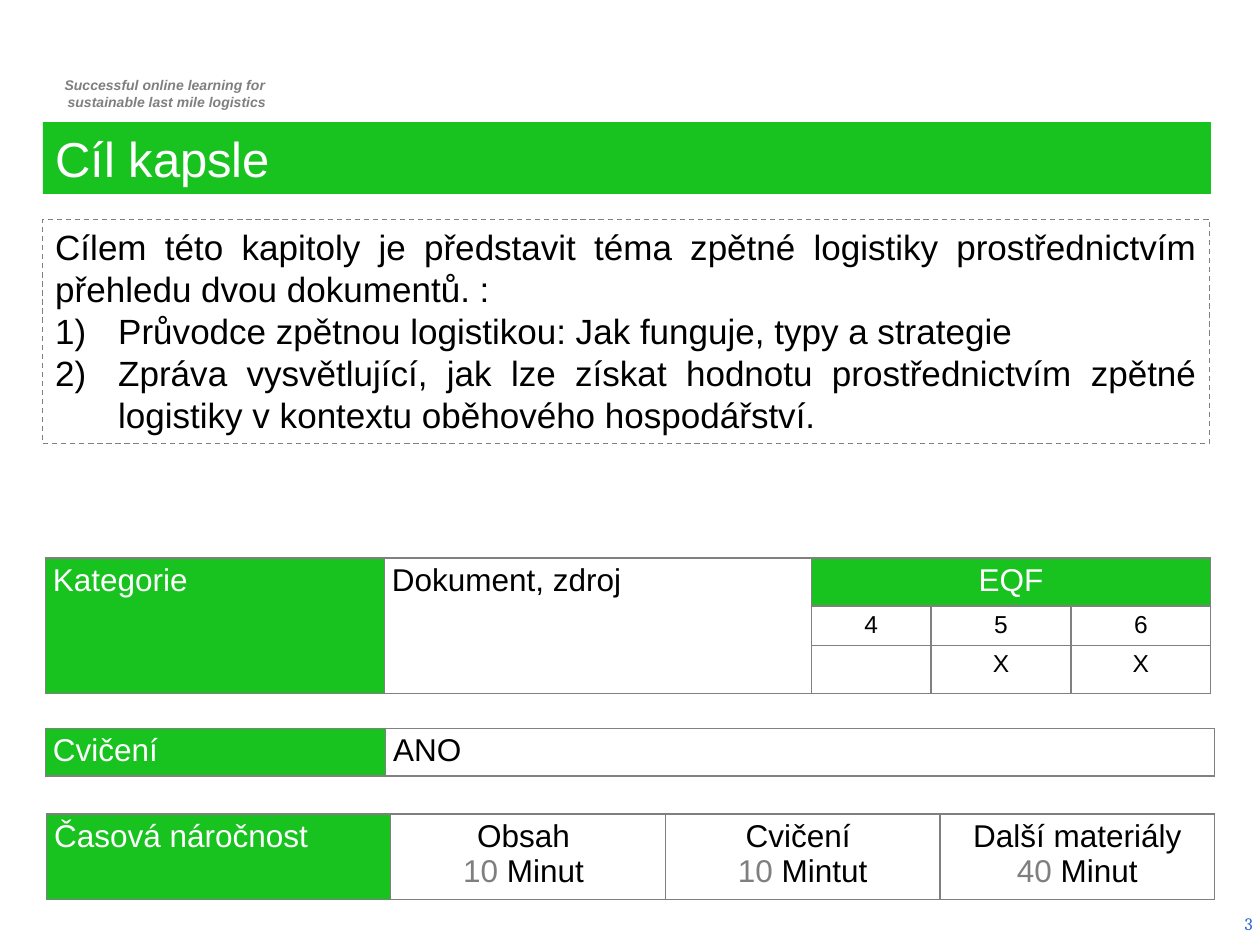
import pptx
import pptx.dml.color
import pptx.enum.dml
import pptx.enum.shapes
import pptx.enum.text
import pptx.oxml.ns
import pptx.util
from lxml import etree

Inches = pptx.util.Inches
Pt = pptx.util.Pt
ALIGN = pptx.enum.text.PP_ALIGN
ANCHOR = pptx.enum.text.MSO_ANCHOR

WIDTH, HEIGHT = 10, 7.5
LEFT = 0.036 * WIDTH
GREEN, GRAY, BLACK, WHITE, BLUE = "18C320", "808080", "000000", "FFFFFF", "3366CC"
MID_GRAY = "7F7F7F"


def color(hex_string):
    return pptx.dml.color.RGBColor.from_string(hex_string)


def add_element(parent, tag, **attributes):
    return etree.SubElement(parent, pptx.oxml.ns.qn(tag), **attributes)


def format_run(run, size, hex_string, name="Arial"):
    run.font.size = Pt(size)
    run.font.name = name
    run.font.color.rgb = color(hex_string)


def write(text_frame, lines, size, hex_string, align, name="Arial"):
    """Put one paragraph per line into the frame, all in one style."""
    text_frame.word_wrap = True
    text_frame.text = "\n".join(lines)
    for paragraph in text_frame.paragraphs:
        paragraph.alignment = align
        for run in paragraph.runs:
            format_run(run, size, hex_string, name)


def add_text(slide, box, lines, size, hex_string, align, name="Arial"):
    shape = slide.shapes.add_textbox(*map(Inches, box))
    write(shape.text_frame, lines, size, hex_string, align, name)
    return shape


def add_rectangle(slide, box):
    shape = slide.shapes.add_shape(
        pptx.enum.shapes.MSO_SHAPE.RECTANGLE, *map(Inches, box))
    shape.shadow.inherit = False
    shape.fill.background()
    shape.line.fill.background()
    shape.text_frame.vertical_anchor = ANCHOR.TOP
    return shape


def number_paragraph(paragraph):
    properties = paragraph._p.get_or_add_pPr()
    properties.set("marL", str(Inches(0.5)))
    properties.set("indent", str(-Inches(0.5)))
    bullet_color = add_element(properties, "a:buClr")
    add_element(bullet_color, "a:srgbClr", val=BLACK)
    add_element(properties, "a:buFont", typeface="+mj-lt")
    add_element(properties, "a:buAutoNum", type="arabicParenR")


def set_borders(cell, hex_string):
    properties = cell._tc.get_or_add_tcPr()
    for side in ("L", "R", "T", "B"):
        line = add_element(properties, "a:ln" + side, w=str(Pt(1)))
        fill = add_element(line, "a:solidFill")
        add_element(fill, "a:srgbClr", val=hex_string)


def add_grid(slide, left, top, columns, rows, border=GRAY):
    """Add an unbanded table with plain bordered cells."""
    frame = slide.shapes.add_table(
        len(rows), len(columns), Inches(left), Inches(top),
        Inches(sum(columns)), Inches(sum(rows)))
    table = frame.table
    table.first_row = table.horz_banding = False
    for column, width in zip(table.columns, columns):
        column.width = Inches(width)
    for row, height in zip(table.rows, rows):
        row.height = Inches(height)
    for cell in table.iter_cells():
        set_borders(cell, border)
        cell.fill.background()
        cell.margin_left = cell.margin_right = Inches(0.06)
        cell.margin_top = cell.margin_bottom = Inches(0.04)
    return table


def fill_cell(cell, text, size=18, align=ALIGN.CENTER):
    write(cell.text_frame, [text], size, BLACK, align)


def fill_header(cell, text, align=ALIGN.JUSTIFY):
    write(cell.text_frame, [text], 18, WHITE, align)
    cell.fill.solid()
    cell.fill.fore_color.rgb = color(GREEN)


def fill_duration(cell, label, amount, unit):
    fill_cell(cell, label)
    paragraph = cell.text_frame.add_paragraph()
    paragraph.alignment = ALIGN.CENTER
    for text, hex_string in ((amount, MID_GRAY), (unit, BLACK)):
        run = paragraph.add_run()
        run.text = text
        format_run(run, 18, hex_string)


def add_heading(slide):
    tagline = add_text(
        slide, (0.29, 0.56, 2.03, 0.37),
        ["Successful online learning for ", "sustainable last mile logistics"],
        8, MID_GRAY, ALIGN.CENTER)
    for paragraph in tagline.text_frame.paragraphs:
        paragraph._p.get_or_add_pPr().set("marL", str(Inches(0.04)))
        paragraph.font.bold = paragraph.font.italic = True
        for run in paragraph.runs:
            run.font.bold = run.font.italic = True

    title = add_rectangle(slide, (0.34, 0.97, 9.27, 0.57))
    title.fill.solid()
    title.fill.fore_color.rgb = color(GREEN)
    write(title.text_frame, ["Cíl kapsle"], 28, WHITE, ALIGN.LEFT)


def add_goal(slide):
    goal = add_rectangle(slide, (0.34, 1.74, 9.26, 1.78))
    goal.line.color.rgb = color(GRAY)
    goal.line.width = Pt(0.75)
    goal.line.dash_style = pptx.enum.dml.MSO_LINE.DASH
    write(goal.text_frame, [
        "Cílem této kapitoly je představit téma zpětné logistiky "
        "prostřednictvím přehledu dvou dokumentů. :",
        "Průvodce zpětnou logistikou: Jak funguje, typy a strategie",
        "Zpráva vysvětlující, jak lze získat hodnotu prostřednictvím zpětné "
        "logistiky v kontextu oběhového hospodářství.",
    ], 20, BLACK, ALIGN.JUSTIFY)
    for paragraph in goal.text_frame.paragraphs[1:]:
        number_paragraph(paragraph)


def add_category_table(slide):
    table = add_grid(slide, LEFT, 4.43, [2.69, 3.39, 0.95, 1.11, 1.11],
                     [0.37, 0.31, 0.37])
    for column in (0, 1):
        table.cell(0, column).merge(table.cell(2, column))
    table.cell(0, 2).merge(table.cell(0, 4))
    fill_header(table.cell(0, 0), "Kategorie")
    fill_cell(table.cell(0, 1), "Dokument, zdroj", align=ALIGN.JUSTIFY)
    fill_header(table.cell(0, 2), "EQF", ALIGN.CENTER)
    for column, level in enumerate("456", start=2):
        fill_cell(table.cell(1, column), level, 14)
    for column in (3, 4):
        fill_cell(table.cell(2, column), "X", 14)


def add_exercise_table(slide):
    table = add_grid(slide, LEFT, 5.78, [2.7, 6.58], [0.37])
    fill_header(table.cell(0, 0), "Cvičení")
    fill_cell(table.cell(0, 1), "ANO", align=ALIGN.JUSTIFY)


def add_time_table(slide):
    table = add_grid(slide, 0.37, 6.46, [2.73] + [2.18] * 3, [0.68], MID_GRAY)
    fill_header(table.cell(0, 0), "Časová náročnost")
    durations = [("Obsah ", "10 ", "Minut "), ("Cvičení ", "10 ", "Mintut"),
                 ("Další materiály", "40 ", "Minut")]
    for column, duration in enumerate(durations, start=1):
        fill_duration(table.cell(0, column), *duration)


def main():
    presentation = pptx.Presentation()
    presentation.slide_width = Inches(WIDTH)
    presentation.slide_height = Inches(HEIGHT)
    slide = presentation.slides.add_slide(presentation.slide_layouts[6])
    add_heading(slide)
    add_goal(slide)
    add_category_table(slide)
    add_exercise_table(slide)
    add_time_table(slide)
    number = add_text(slide, (7.71, 7.13, 2.33, 0.4), ["3"], 10, BLUE,
                      ALIGN.RIGHT, "Cambria")
    number.text_frame.vertical_anchor = ANCHOR.MIDDLE
    presentation.save("out.pptx")


if __name__ == "__main__":
    main()
